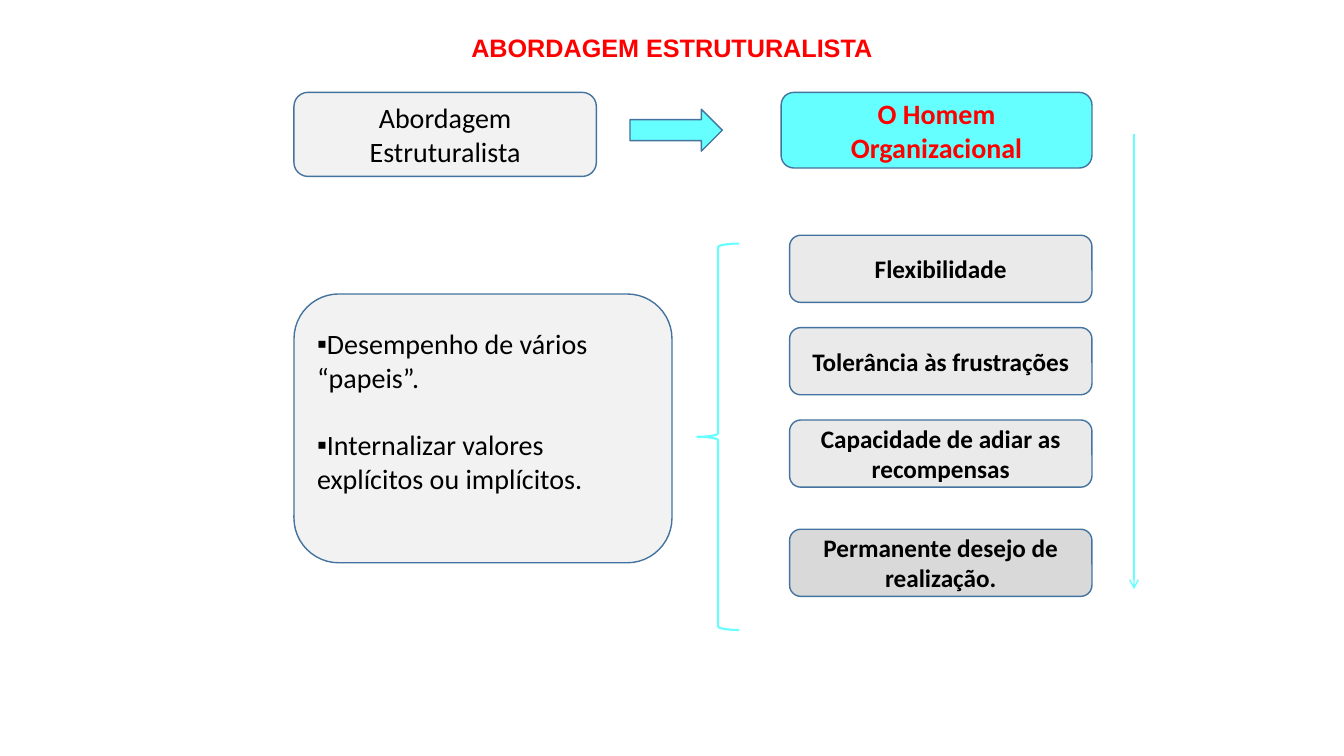
from lxml import etree
from pptx import Presentation
from pptx.dml.color import RGBColor
from pptx.enum.shapes import MSO_CONNECTOR, MSO_SHAPE
from pptx.enum.text import MSO_ANCHOR, PP_ALIGN
from pptx.oxml.ns import qn
from pptx.util import Emu, Pt

ARROW, BRACE = MSO_SHAPE.RIGHT_ARROW, MSO_SHAPE.LEFT_BRACE
TRAIT, CARD = MSO_SHAPE.ROUNDED_RECTANGLE, MSO_SHAPE.FLOWCHART_ALTERNATE_PROCESS
STRAIGHT = MSO_CONNECTOR.STRAIGHT
TOP, MIDDLE = MSO_ANCHOR.TOP, MSO_ANCHOR.MIDDLE
LEFT, CENTER = PP_ALIGN.LEFT, PP_ALIGN.CENTER
CYAN, EDGE, RED, BLACK = "66FFFF", "43739E", "FF0000", "000000"
PALE, LIGHT, GRAY = "F2F2F2", "EAEAEA", "D9D9D9"


def px(length):
    """Turn pixels into EMU."""
    return Emu(length * 9525)


def color(value):
    """Turn a hex string into a colour."""
    return RGBColor.from_string(value)


def write(paragraph, text, size, ink=BLACK, bold=False, align=CENTER, font="Calibri"):
    """Add one formatted run to an aligned paragraph."""
    paragraph.alignment = align
    run = paragraph.add_run()
    run.text = text
    run.font.name = font
    run.font.size = Pt(size)
    run.font.bold = bold
    run.font.color.rgb = color(ink)


def add_title(slide, text):
    """Place and fill the title placeholder."""
    title = slide.shapes.title
    title.left, title.top, title.width, title.height = map(px, (208, 29, 864, 59))
    title.text_frame.vertical_anchor = TOP
    heading = title.text_frame.paragraphs[0]
    heading.line_spacing = 0.9
    write(heading, text, 18, RED, True, font="Arial")


def add_figure(slide, preset, box, fill=None, edge=EDGE, weight=1):
    """Draw a preset shape with an outline and an optional fill."""
    figure = slide.shapes.add_shape(preset, *map(px, box))
    figure.shadow.inherit = False
    if fill:
        figure.fill.solid()
        figure.fill.fore_color.rgb = color(fill)
    else:
        figure.fill.background()
    figure.line.color.rgb = color(edge)
    figure.line.width = Pt(weight)
    return figure


def add_label(slide, preset, box, fill, text, size, ink=BLACK, bold=False):
    """Draw a box with a centred label."""
    frame = add_figure(slide, preset, box, fill).text_frame
    frame.word_wrap = True
    frame.vertical_anchor = MIDDLE
    write(frame.paragraphs[0], text, size, ink, bold)


def add_bullet_card(slide, box, items):
    """Draw a box with a spaced list of square bullets."""
    frame = add_figure(slide, CARD, box, PALE).text_frame
    frame.word_wrap = True
    frame.vertical_anchor = MIDDLE
    frame.margin_bottom = px(38)
    for index, item in enumerate(items):
        paragraph = frame.add_paragraph() if index else frame.paragraphs[0]
        write(paragraph, item, 20, align=LEFT)
        if index:
            paragraph.space_before = Pt(24)
        properties = paragraph._p.get_or_add_pPr()
        properties.set("marL", "0")
        properties.set("indent", "0")
        etree.SubElement(properties, qn("a:buFont")).set("typeface", "Arial")
        etree.SubElement(properties, qn("a:buChar")).set("char", "▪")


def add_arrow_line(slide, x, top, bottom):
    """Draw a downward line with an open arrowhead."""
    line = slide.shapes.add_connector(STRAIGHT, *map(px, (x, top, x, bottom)))
    line.line.color.rgb = color(CYAN)
    line.line.width = Pt(1)
    etree.SubElement(line.line._get_or_add_ln(), qn("a:tailEnd")).set("type", "arrow")
    etree.SubElement(line._element.spPr, qn("a:effectLst"))


def main():
    """Build the slide and save it."""
    deck = Presentation()
    deck.slide_width, deck.slide_height = px(1280), px(720)
    slide = deck.slides.add_slide(deck.slide_layouts[5])
    add_title(slide, "ABORDAGEM ESTRUTURALISTA")
    add_figure(slide, ARROW, (600, 104, 88, 40), CYAN)
    traits = [
        (224, LIGHT, "Flexibilidade"),
        (312, LIGHT, "Tolerância às frustrações"),
        (400, LIGHT, "Capacidade de adiar as recompensas"),
        (504, GRAY, "Permanente desejo de realização."),
    ]
    for top, fill, trait in traits:
        add_label(slide, TRAIT, (752, top, 288, 64), fill, trait, 18, bold=True)
    add_label(slide, CARD, (280, 88, 288, 80), PALE, "Abordagem Estruturalista", 20)
    add_bullet_card(slide, (280, 280, 360, 256), [
        "Desempenho de vários “papeis”.",
        "Internalizar valores explícitos ou implícitos.",
    ])
    add_label(slide, CARD, (744, 88, 296, 72), CYAN, "O Homem Organizacional", 20, RED, True)
    add_arrow_line(slide, 1080, 128, 561)
    add_figure(slide, BRACE, (664, 232, 40, 368), edge=CYAN, weight=1.5)
    deck.save("out.pptx")


if __name__ == "__main__":
    main()
